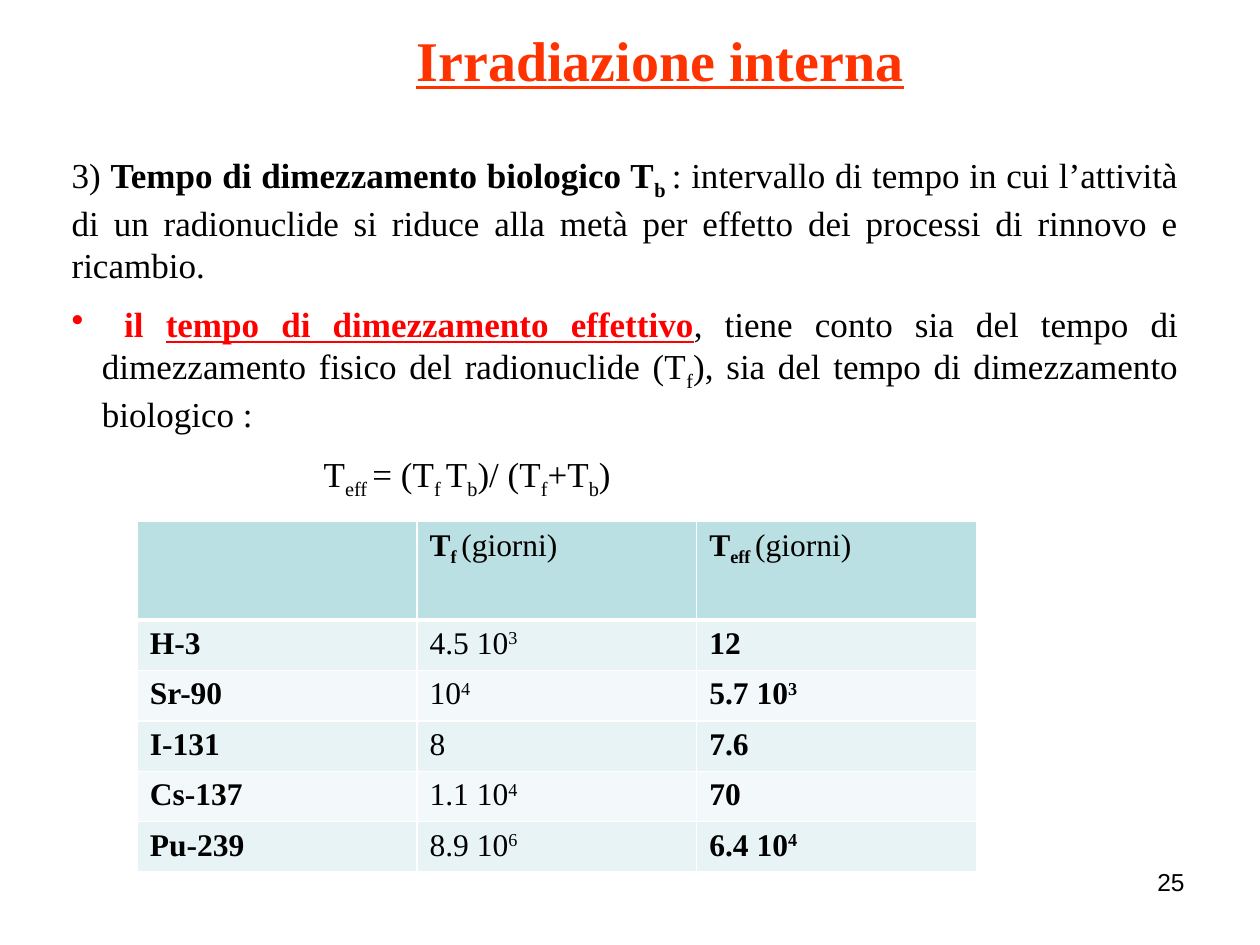
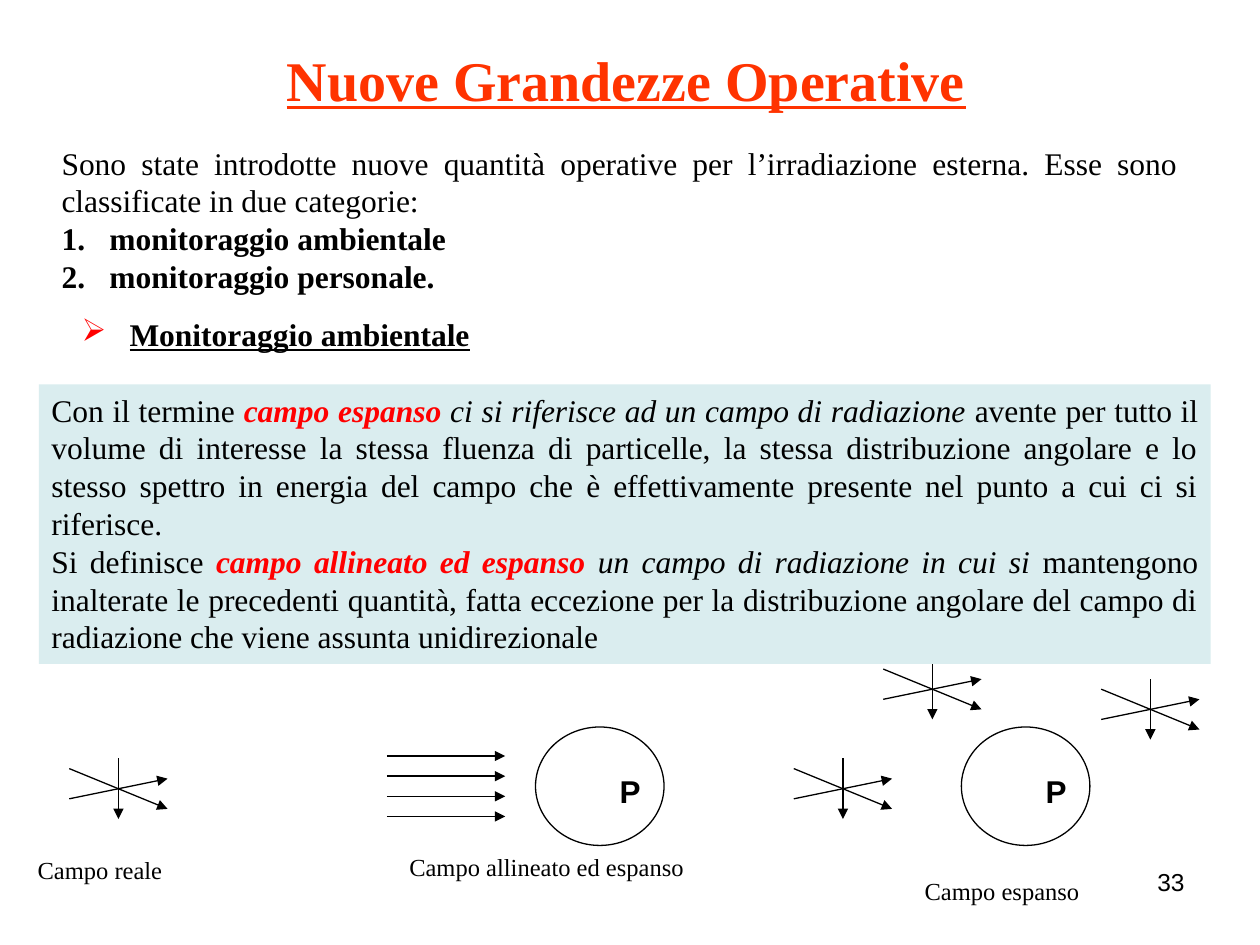
import pptx
import pptx.util
import pptx.dml.color
import pptx.enum.text
import pptx.enum.shapes
import pptx.oxml.ns
from lxml import etree

Inches, Pt = pptx.util.Inches, pptx.util.Pt
RGB = pptx.dml.color.RGBColor.from_string
ALIGN = pptx.enum.text.PP_ALIGN
SHAPE = pptx.enum.shapes.MSO_SHAPE
qn = pptx.oxml.ns.qn


class Theme:
    serif, sans = "Times New Roman", "Arial"
    black, white, red, title = "000000", "FFFFFF", "FF0000", "FF3300"
    head, odd, even, panel = "BBE0E3", "E7F3F4", "F3F9FA", "DAEDEF"
    big, lead, body, small = 32, 20, 18, 14
    line = 0.75


def write(para, parts, size, color=Theme.black, font=Theme.serif, align=ALIGN.LEFT):
    """Add (text, marks) runs; marks: b bold, i italic, u underline, r red, _ sub, ^ super."""
    para.alignment = align
    for text, marks in parts:
        run = para.add_run()
        run.text = text
        face = run.font
        face.name, face.size = font, Pt(size)
        face.bold, face.italic, face.underline = "b" in marks, "i" in marks, "u" in marks
        face.color.rgb = RGB(Theme.red if "r" in marks else color)
        if "_" in marks:
            run._r.get_or_add_rPr().set("baseline", "-25000")
        elif "^" in marks:
            run._r.get_or_add_rPr().set("baseline", "30000")
    return para


def add_box(slide, left, top, width, height):
    """Add a wrapping text box and return its text frame."""
    frame = slide.shapes.add_textbox(Inches(left), Inches(top), Inches(width), Inches(height)).text_frame
    frame.word_wrap = True
    return frame


deck = pptx.Presentation()
deck.slide_width, deck.slide_height = Inches(10), Inches(7.5)
blank = deck.slide_layouts[6]

# Shared titles and page numbers
slides = []
for title, spot, page in [
    ("Irradiazione interna", (3.19, 0.15, 4.1, 0.64), "25"),
    ("Nuove Grandezze Operative", (0.47, 0.31, 9, 0.64), "33"),
]:
    slide = deck.slides.add_slide(blank)
    slides.append(slide)
    write(add_box(slide, *spot).paragraphs[0], [(title, "bu")],
          Theme.big, Theme.title, align=ALIGN.CENTER)
    write(add_box(slide, 7.17, 6.83, 2.33, 0.52).paragraphs[0], [(page, "")],
          Theme.small, font=Theme.sans, align=ALIGN.RIGHT)
decay, field = slides

# Half-life definitions: runs, left margin, first-line indent, bullet
halves = [
    ([("3) ", ""), ("Tempo di dimezzamento biologico T", "b"), ("b ", "b_"),
      (": intervallo di tempo in cui l’attività di un radionuclide si riduce alla metà "
       "per effetto dei processi di rinnovo e ricambio.", "")], 0, 0, None),
    ([(" il ", "br"), ("tempo di dimezzamento effettivo", "bru"),
      (", tiene conto sia del tempo di dimezzamento fisico del radionuclide (T", ""), ("f", "_"),
      ("), sia del tempo di dimezzamento biologico :", "")], 0.24, -0.24, "•"),
    ([("T", ""), ("eff ", "_"), ("= (T", ""), ("f ", "_"), ("T", ""), ("b", "_"), (")/ (T", ""),
      ("f", "_"), ("+T", ""), ("b", "_"), (")", "")], 2, 0, None),
]
frame = add_box(decay, 0.47, 1.17, 8.98, 2.79)
for index, (parts, margin, indent, bullet) in enumerate(halves):
    para = frame.add_paragraph() if index else frame.paragraphs[0]
    write(para, parts, Theme.lead, align=ALIGN.JUSTIFY)
    if index:
        para.space_before = Pt(10)
    props = para._p.get_or_add_pPr()
    props.set("marL", str(Inches(margin)))
    props.set("indent", str(Inches(indent)))
    if bullet:
        etree.SubElement(props, qn("a:buChar")).set("char", bullet)

# Half-life table
rows = [
    ([], [("T", "b"), ("f ", "b_"), ("(giorni)", "")], [("T", "b"), ("eff ", "b_"), ("(giorni)", "")]),
    ([("H-3", "b")], [("4.5 10", ""), ("3", "^")], [("12", "b")]),
    ([("Sr-90", "b")], [("10", ""), ("4", "^")], [("5.7 10", "b"), ("3", "b^")]),
    ([("I-131", "b")], [("8", "")], [("7.6", "b")]),
    ([("Cs-137", "b")], [("1.1 10", ""), ("4", "^")], [("70", "b")]),
    ([("Pu-239", "b")], [("8.9 10", ""), ("6", "^")], [("6.4 10", "b"), ("4", "b^")]),
]
table = decay.shapes.add_table(len(rows), 3, Inches(1.09), Inches(4.14), Inches(6.66), Inches(2.8)).table
for column in table.columns:
    column.width = Inches(2.22)
for row, cells in enumerate(rows):
    table.rows[row].height = Inches(0.4 if row else 0.78)
    shade = Theme.head if row == 0 else Theme.odd if row % 2 else Theme.even
    for col, parts in enumerate(cells):
        cell = table.cell(row, col)
        write(cell.text_frame.paragraphs[0], parts, Theme.body)
        props = cell._tc.get_or_add_tcPr()
        for side in "LRTB":
            thick = (row, side) in [(0, "B"), (1, "T")]
            edge = etree.SubElement(props, qn("a:ln" + side), w=str(Pt(3 if thick else 1)))
            paint = etree.SubElement(edge, qn("a:solidFill"))
            etree.SubElement(paint, qn("a:srgbClr"), val=Theme.white)
        cell.fill.solid()
        cell.fill.fore_color.rgb = RGB(shade)

# Two categories of monitoring
frame = add_box(field, 0.39, 1.09, 9.06, 1.31)
write(frame.paragraphs[0], [(
    "Sono state introdotte nuove quantità operative per l’irradiazione esterna. "
    "Esse sono classificate in due categorie:", "")], Theme.body, align=ALIGN.JUSTIFY)
items = [write(frame.add_paragraph(), [(text, "b")], Theme.body, align=ALIGN.JUSTIFY)
         for text in ("monitoraggio ambientale", "monitoraggio personale.")]
topic = write(add_box(field, 0.55, 2.42, 3.37, 0.43).paragraphs[0],
              [("Monitoraggio ambientale", "bu")], Theme.body, align=ALIGN.JUSTIFY)
topic.line_spacing = 1.1
for para in items + [topic]:
    props = para._p.get_or_add_pPr()
    props.set("marL", str(Inches(0.38)))
    props.set("indent", str(Inches(-0.38)))
    if para is topic:
        tint = etree.SubElement(props, qn("a:buClr"))
        etree.SubElement(tint, qn("a:srgbClr"), val=Theme.red)
        etree.SubElement(props, qn("a:buChar"), char="➢")
    else:
        etree.SubElement(props, qn("a:buAutoNum"), type="arabicPeriod")

# Spheres with point P
for left in (4.25, 7.63):
    ball = field.shapes.add_shape(SHAPE.OVAL, Inches(left), Inches(5.77), Inches(1.02), Inches(0.94))
    ball.shadow.inherit = False
    ball.fill.background()
    ball.line.color.rgb = RGB(Theme.black)
    ball.line.width = Pt(Theme.line)
    write(add_box(field, left + 0.57, 6.08, 0.3, 0.4).paragraphs[0], [("P", "b")],
          Theme.body, font=Theme.sans)

# Parallel rays, then a star of three rays round each centre
rays = [(3.07, 6 + 0.16 * step, 4.01, 6 + 0.16 * step) for step in range(4)]
for x, y in [(0.94, 6.26), (6.69, 6.26), (7.4, 5.47), (9.13, 5.63)]:
    for dx, dy in [(0.39, -0.08), (0.39, 0.16), (0, 0.24)]:
        rays.append((x - dx, y - dy, x + dx, y + dy))
for ray in rays:
    arrow = field.shapes.add_connector(
        pptx.enum.shapes.MSO_CONNECTOR.STRAIGHT, *[Inches(value) for value in ray])
    arrow.line.color.rgb = RGB(Theme.black)
    arrow.line.width = Pt(Theme.line)
    etree.SubElement(arrow.line._get_or_add_ln(), qn("a:tailEnd"), type="triangle")
    etree.SubElement(arrow._element.spPr, qn("a:effectLst"))

for label, left, top in [
    ("Campo allineato ed espanso", 3.15, 6.71),
    ("Campo espanso", 7.24, 6.9),
    ("Campo reale", 0.2, 6.74),
]:
    write(add_box(field, left, top, 2.76, 0.33).paragraphs[0], [(label, "")], Theme.small)

# Panel of definitions, in front of the rays
panel = field.shapes.add_shape(SHAPE.RECTANGLE, Inches(0.31), Inches(3.05), Inches(9.3), Inches(2.22))
panel.shadow.inherit = False
panel.fill.solid()
panel.fill.fore_color.rgb = RGB(Theme.panel)
panel.line.fill.background()
frame = panel.text_frame
frame.word_wrap = True
frame.vertical_anchor = pptx.enum.text.MSO_ANCHOR.TOP
terms = [
    [("Con il termine ", ""), ("campo espanso ", "bir"),
     ("ci si riferisce ad un campo di radiazione ", "i"),
     ("avente per tutto il volume di interesse la stessa fluenza di particelle, la stessa "
      "distribuzione angolare e lo stesso spettro in energia del campo che è effettivamente "
      "presente nel punto a cui ci si riferisce.", "")],
    [("Si definisce ", ""), ("campo allineato ed espanso ", "bir"),
     ("un campo di radiazione in cui si ", "i"),
     ("mantengono inalterate le precedenti quantità, fatta eccezione per la distribuzione "
      "angolare del campo di radiazione che viene assunta unidirezionale", "")],
]
for index, parts in enumerate(terms):
    para = frame.add_paragraph() if index else frame.paragraphs[0]
    write(para, parts, Theme.body, align=ALIGN.JUSTIFY)

deck.save("out.pptx")
